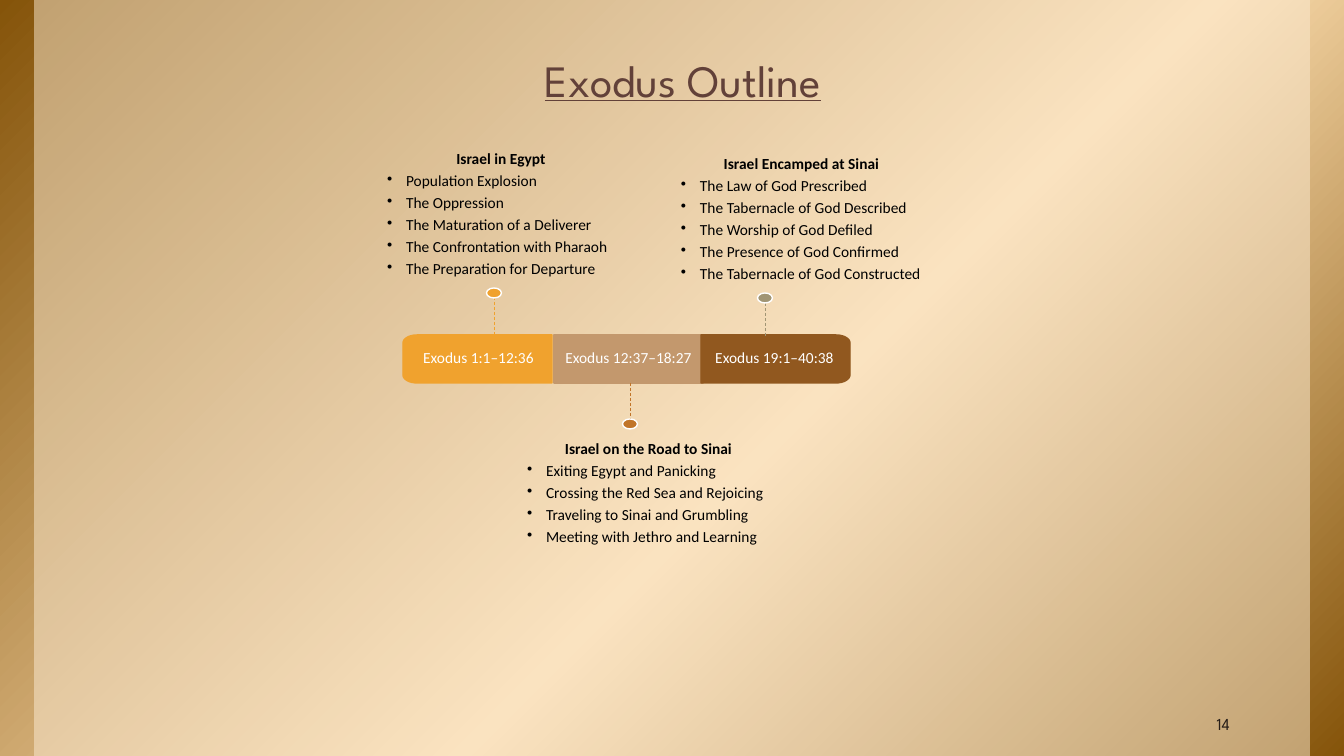
from dataclasses import dataclass
from math import cos, pi, sin

from lxml import etree
from copy import deepcopy
from pptx import Presentation
from pptx.dml.color import RGBColor
from pptx.enum.dml import MSO_LINE
from pptx.enum.shapes import MSO_CONNECTOR, MSO_SHAPE
from pptx.enum.text import MSO_ANCHOR, PP_ALIGN
from pptx.oxml.ns import qn
from pptx.util import Pt

DASH = MSO_LINE.DASH
STRAIGHT = MSO_CONNECTOR.STRAIGHT
RECTANGLE, OVAL = MSO_SHAPE.RECTANGLE, MSO_SHAPE.OVAL
TOP, MIDDLE, BOTTOM = MSO_ANCHOR.TOP, MSO_ANCHOR.MIDDLE, MSO_ANCHOR.BOTTOM
LEFT, CENTER, RIGHT = PP_ALIGN.LEFT, PP_ALIGN.CENTER, PP_ALIGN.RIGHT

EMU_PER_PX = 914400 / 100.8
SLIDE_WIDTH, SLIDE_HEIGHT = 1344, 756
BAR_TOP, BAR_WIDTH, BAR_HEIGHT = 335, 149, 48
CORNER_WIDTH, CORNER_HEIGHT, CORNER_STEPS = 14, 8, 8
DOT_WIDTH, DOT_HEIGHT = 15, 10
BULLET_INDENT = 19


@dataclass(frozen=True)
class Theme:
    title_font: str = "League Spartan"
    body_font: str = "Calibri"
    title_size: float = 32
    number_size: float = 12
    body_size: float = 11
    space_after: float = 3.85
    title: str = "624139"
    number: str = "271E18"
    body: str = "000000"
    white: str = "FFFFFF"
    panel: str = "FCECD5"
    backdrop: tuple = ((0, "85540A"), (0.58, "F9DAAB"), (1, "85540A"))
    amber: str = "F0A22E"
    tan: str = "C3986D"
    brown: str = "91581F"
    orange: str = "C17529"
    sage: str = "A19574"


def px(length):
    return round(length * EMU_PER_PX)


def rgb(color):
    return RGBColor.from_string(color)


class SlideBuilder:
    def __init__(self, slide, theme):
        self.slide = slide
        self.theme = theme

    def paint(self, shape, fill, line=None):
        shape.shadow.inherit = False
        shape.fill.solid()
        shape.fill.fore_color.rgb = rgb(fill)
        if line:
            shape.line.color.rgb = rgb(line)
            shape.line.width = Pt(1)
        else:
            shape.line.fill.background()

    def shape(self, kind, left, top, width, height, fill, line=None):
        shape = self.slide.shapes.add_shape(kind, px(left), px(top), px(width), px(height))
        self.paint(shape, fill, line)
        return shape

    def backdrop(self):
        stops = self.theme.backdrop
        shape = self.shape(RECTANGLE, 0, 0, SLIDE_WIDTH, SLIDE_HEIGHT, stops[0][1])
        shape.fill.gradient()
        shape.fill.gradient_angle = 315
        stop_list = shape._element.xpath(".//a:gsLst")[0]
        stop_list.append(deepcopy(stop_list[0]))
        for stop, (position, color) in zip(shape.fill.gradient_stops, stops):
            stop.position = position
            stop.color.rgb = rgb(color)

    def panel(self, left, width):
        shape = self.shape(RECTANGLE, left, 0, width, SLIDE_HEIGHT, self.theme.panel)
        color = shape._element.xpath("./p:spPr/a:solidFill/a:srgbClr")[0]
        etree.SubElement(color, qn("a:alpha"), val="50000")

    def set_frame(self, shape, anchor, insets):
        frame = shape.text_frame
        frame.word_wrap = True
        frame.vertical_anchor = anchor
        frame.margin_left, frame.margin_top, frame.margin_right, frame.margin_bottom = map(px, insets)
        return frame

    def format(self, paragraph, font, size, color, align, spacing=0.9, bold=False, underline=False):
        paragraph.alignment = align
        paragraph.line_spacing = spacing
        for run in paragraph.runs:
            run.font.name = font
            run.font.size = Pt(size)
            run.font.color.rgb = rgb(color)
            run.font.bold = bold
            run.font.underline = underline

    def body(self, paragraph, color, align, bold=False):
        self.format(paragraph, self.theme.body_font, self.theme.body_size, color, align, bold=bold)
        paragraph.space_after = Pt(self.theme.space_after)

    def text_box(self, left, top, width, height, anchor, insets):
        shape = self.slide.shapes.add_textbox(px(left), px(top), px(width), px(height))
        return self.set_frame(shape, anchor, insets)

    def heading(self, text, box, size, color, align, spacing=1.0, underline=False):
        frame = self.text_box(*box, BOTTOM, (13, 7, 13, 7))
        frame.text = text
        self.format(frame.paragraphs[0], self.theme.title_font, size, color, align,
                    spacing, underline=underline)

    def outline(self, title, points, box, anchor, insets):
        frame = self.text_box(*box, anchor, insets)
        frame.text = title
        self.body(frame.paragraphs[0], self.theme.body, CENTER, bold=True)
        for point in points:
            paragraph = frame.add_paragraph()
            paragraph.text = point
            properties = paragraph._p.get_or_add_pPr()
            properties.set("marL", str(px(BULLET_INDENT)))
            properties.set("indent", str(-px(BULLET_INDENT)))
            etree.SubElement(properties, qn("a:buChar"), char="•")
            self.body(paragraph, self.theme.body, LEFT)

    def bar(self, text, left, color, round_left=False, round_right=False):
        right, bottom = left + BAR_WIDTH, BAR_TOP + BAR_HEIGHT
        corners = (
            (left, BAR_TOP, 1, 1, pi, round_left),
            (right, BAR_TOP, -1, 1, 1.5 * pi, round_right),
            (right, bottom, -1, -1, 0, round_right),
            (left, bottom, 1, -1, 0.5 * pi, round_left),
        )
        points = []
        for x, y, inward_x, inward_y, start, rounded in corners:
            if not rounded:
                points.append((px(x), px(y)))
                continue
            for step in range(CORNER_STEPS + 1):
                angle = start + step / CORNER_STEPS * pi / 2
                points.append((px(x + CORNER_WIDTH * (inward_x + cos(angle))),
                               px(y + CORNER_HEIGHT * (inward_y + sin(angle)))))
        builder = self.slide.shapes.build_freeform(*points[0])
        builder.add_line_segments(points[1:], close=True)
        shape = builder.convert_to_shape()
        self.paint(shape, color, color)
        insets = (11 if round_left else 9, 9, 11 if round_right else 9, 9)
        frame = self.set_frame(shape, MIDDLE, insets)
        frame.text = text
        self.body(frame.paragraphs[0], self.theme.white, CENTER)

    def marker(self, x, dot_top, line_top, line_bottom, color):
        connector = self.slide.shapes.add_connector(
            STRAIGHT, px(x), px(line_top), px(x), px(line_bottom))
        connector.line.color.rgb = rgb(color)
        connector.line.width = Pt(0.5)
        connector.line.dash_style = DASH
        etree.SubElement(connector._element.spPr, qn("a:effectLst"))
        self.shape(OVAL, x - DOT_WIDTH / 2, dot_top, DOT_WIDTH, DOT_HEIGHT, color, self.theme.white)


def main():
    presentation = Presentation()
    presentation.slide_width, presentation.slide_height = px(SLIDE_WIDTH), px(SLIDE_HEIGHT)
    theme = Theme()
    builder = SlideBuilder(presentation.slides.add_slide(presentation.slide_layouts[6]), theme)

    builder.backdrop()
    builder.panel(34, 1276)
    builder.heading("Exodus Outline", (123, 32, 1120, 82), theme.title_size, theme.title,
                    CENTER, 0.85, underline=True)
    builder.heading("14", (1121, 706, 122, 35), theme.number_size, theme.number, RIGHT)

    builder.bar("Exodus 1:1–12:36", 403, theme.amber, round_left=True)
    builder.bar("Exodus 12:37–18:27", 554, theme.tan)
    builder.bar("Exodus 19:1–40:38", 701, theme.brown, round_right=True)

    bar_bottom = BAR_TOP + BAR_HEIGHT
    builder.marker(494, 288, 297, BAR_TOP, theme.amber)
    builder.marker(630, 419, bar_bottom, 422, theme.orange)
    builder.marker(765, 293, 298, BAR_TOP + 1, theme.sage)

    builder.outline("Israel in Egypt", (
        "Population Explosion", "The Oppression", "The Maturation of a Deliverer",
        "The Confrontation with Pharaoh", "The Preparation for Departure",
    ), (387, 147, 228, 140), BOTTOM, (0, 0, 0, 9))
    builder.outline("Israel on the Road to Sinai", (
        "Exiting Egypt and Panicking", "Crossing the Red Sea and Rejoicing",
        "Traveling to Sinai and Grumbling", "Meeting with Jethro and Learning",
    ), (517, 436, 263, 120), TOP, (10, 5, 10, 5))
    builder.outline("Israel Encamped at Sinai", (
        "The Law of God Prescribed", "The Tabernacle of God Described",
        "The Worship of God Defiled", "The Presence of God Confirmed",
        "The Tabernacle of God Constructed",
    ), (671, 151, 261, 143), TOP, (10, 5, 10, 5))

    presentation.save("out.pptx")


if __name__ == "__main__":
    main()
